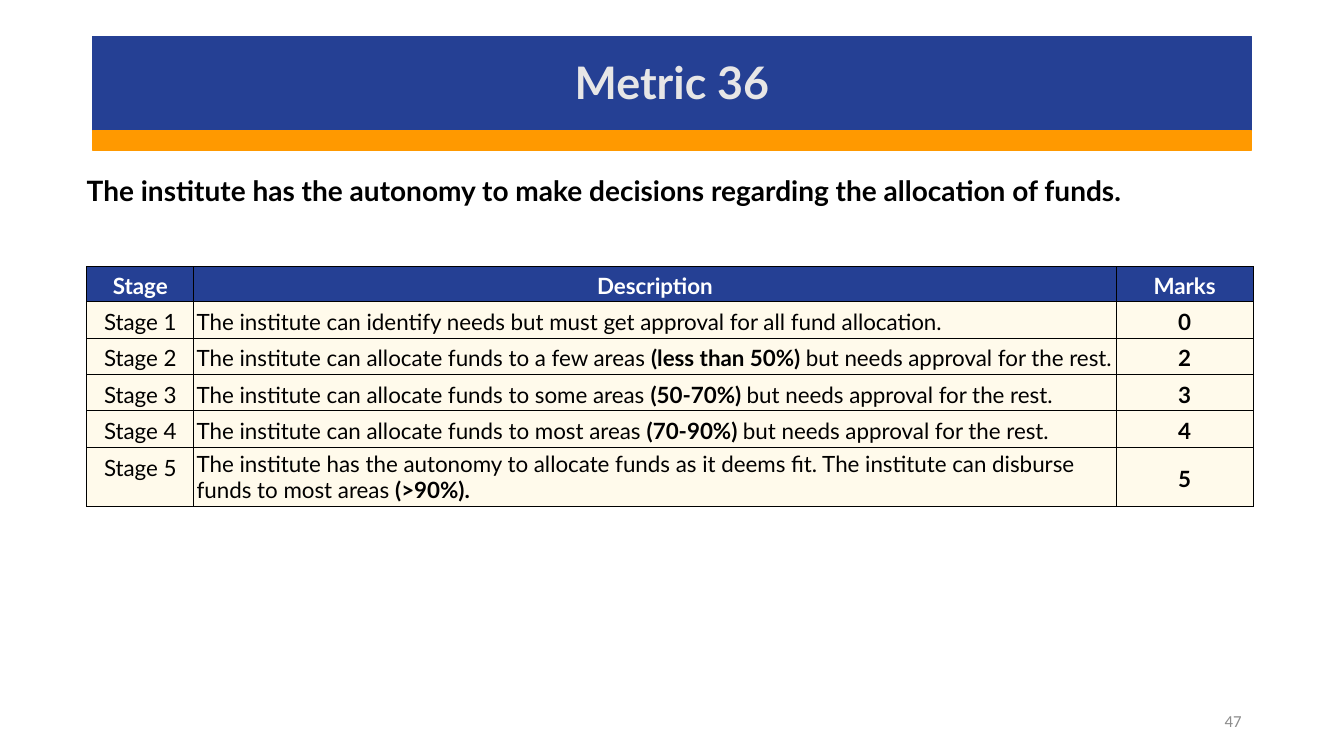
"""Build the Metric 36 slide on fund allocation autonomy."""
from lxml.etree import SubElement
from pptx import Presentation
from pptx.dml.color import RGBColor
from pptx.enum.shapes import MSO_SHAPE
from pptx.enum.text import MSO_ANCHOR, MSO_AUTO_SIZE, PP_ALIGN
from pptx.oxml.ns import qn
from pptx.util import Pt

BLUE = RGBColor(0x25, 0x40, 0x94)
ORANGE = RGBColor(0xFF, 0x99, 0x00)
CREAM = RGBColor(0xFF, 0xFA, 0xEB)
BLACK = RGBColor(0x00, 0x00, 0x00)
WHITE = RGBColor(0xFF, 0xFF, 0xFF)
LIGHT_GRAY = RGBColor(0xE7, 0xE6, 0xE6)
GRAY = RGBColor(0x8C, 0x8C, 0x8C)

HEADER = ("Stage", "Description", "Marks")
STAGES = [
    (["The institute can identify needs but must get approval for all fund allocation."], "0"),
    (["The institute can allocate funds to a few areas ", "(less than 50%) ",
      "but needs approval for the rest."], "2"),
    (["The institute can allocate funds to some areas ", "(50-70%) ",
      "but needs approval for the rest."], "3"),
    (["The institute can allocate funds to most areas ", "(70-90%) ",
      "but needs approval for the rest."], "4"),
    (["The institute has the autonomy to allocate funds as it deems fit. "
      "The institute can disburse funds to most areas ", "(>90%)."], "5"),
]
COLUMN_WIDTHS = (76.5, 658.75, 98)
ROW_HEIGHTS = (25, 26, 26, 26, 26, 42)


def add_text(p, text, size=16, color=BLACK, bold=False, font="Lato", align=None, spacing=None):
    """Add a formatted run to a paragraph."""
    if align is not None:
        p.alignment = align
    if spacing:
        p.line_spacing = spacing
    r = p.add_run()
    r.text = text
    r.font.name = font
    r.font.size = Pt(size)
    r.font.bold = bold
    r.font.color.rgb = color


def place(sp, left, top, width, height, anchor):
    """Position a text shape and set its frame."""
    sp.left, sp.top, sp.width, sp.height = Pt(left), Pt(top), Pt(width), Pt(height)
    tf = sp.text_frame
    tf.word_wrap = True
    tf.auto_size = MSO_AUTO_SIZE.NONE
    tf.vertical_anchor = anchor
    return tf.paragraphs[0]


def add_band(slide, top, height, color):
    """Add a coloured band across the heading."""
    sp = slide.shapes.add_shape(MSO_SHAPE.RECTANGLE, Pt(66), Pt(top), Pt(828), Pt(height))
    sp.shadow.inherit = False
    sp.fill.solid()
    sp.fill.fore_color.rgb = color
    sp.line.color.rgb = color
    sp.line.width = Pt(1)


def add_title(slide, text):
    """Fill the title placeholder and bring it above the bands."""
    sp = slide.shapes.title
    p = place(sp, 66, 28, 828, 65.5, MSO_ANCHOR.MIDDLE)
    add_text(p, text, size=32, color=LIGHT_GRAY, bold=True, align=PP_ALIGN.CENTER, spacing=0.9)
    slide.shapes._spTree.append(sp._element)


def add_statement(slide, text):
    """Fill the body placeholder without a bullet."""
    p = place(slide.placeholders[1], 42.5, 123, 872.5, 111, MSO_ANCHOR.TOP)
    pPr = p._p.get_or_add_pPr()
    pPr.set("marL", str(Pt(12.25)))
    pPr.set("indent", "0")
    SubElement(pPr, qn("a:buNone"))
    p.space_before = Pt(0)
    add_text(p, text, size=20, bold=True, spacing=0.9)


def format_cell(cell, fill, anchor, margin):
    """Set the borders, fill, margins and anchor of a cell."""
    tcPr = cell._tc.get_or_add_tcPr()
    for side in ("lnL", "lnR", "lnT", "lnB"):
        ln = SubElement(tcPr, qn(f"a:{side}"), w=str(Pt(0.75)))
        SubElement(SubElement(ln, qn("a:solidFill")), qn("a:srgbClr"), val=str(BLACK))
    cell.fill.solid()
    cell.fill.fore_color.rgb = fill
    cell.vertical_anchor = anchor
    cell.margin_left = cell.margin_right = Pt(margin)
    cell.margin_top = cell.margin_bottom = Pt(margin)
    return cell.text_frame.paragraphs[0]


def add_stage_table(slide):
    """Add the table of stages, descriptions and marks."""
    frame = slide.shapes.add_table(len(ROW_HEIGHTS), len(COLUMN_WIDTHS), Pt(62), Pt(190.5),
                                   Pt(sum(COLUMN_WIDTHS)), Pt(sum(ROW_HEIGHTS)))
    table = frame.table
    for column, width in zip(table.columns, COLUMN_WIDTHS):
        column.width = Pt(width)
    for row, height in zip(table.rows, ROW_HEIGHTS):
        row.height = Pt(height)

    centred = {"align": PP_ALIGN.CENTER, "spacing": 1.15}
    for c, (label, anchor) in enumerate(zip(HEADER, (MSO_ANCHOR.MIDDLE, MSO_ANCHOR.BOTTOM,
                                                   MSO_ANCHOR.MIDDLE))):
        p = format_cell(table.cell(0, c), BLUE, anchor, 1.5)
        add_text(p, label, color=WHITE, bold=True, **centred)
    for n, (description, marks) in enumerate(STAGES, 1):
        p = format_cell(table.cell(n, 0), CREAM, MSO_ANCHOR.TOP, 2)
        add_text(p, f"Stage {n}", **centred)
        p = format_cell(table.cell(n, 1), CREAM, MSO_ANCHOR.BOTTOM, 2)
        for i, part in enumerate(description):
            add_text(p, part, bold=i == 1)
        p = format_cell(table.cell(n, 2), CREAM, MSO_ANCHOR.MIDDLE, 1.5)
        add_text(p, marks, bold=True, **centred)


def add_page_number(slide, text):
    """Add the page number at the lower right."""
    sp = slide.shapes.add_textbox(0, 0, 0, 0)
    p = place(sp, 678, 500.5, 216, 28.75, MSO_ANCHOR.MIDDLE)
    add_text(p, text, size=12, color=GRAY, font="Calibri", align=PP_ALIGN.RIGHT)


def main():
    """Build and save the slide."""
    prs = Presentation()
    prs.slide_width, prs.slide_height = Pt(960), Pt(540)
    slide = prs.slides.add_slide(prs.slide_layouts[1])
    add_band(slide, 26, 67, BLUE)
    add_band(slide, 93.5, 13.75, ORANGE)
    add_statement(slide, "The institute has the autonomy to make decisions "
                         "regarding the allocation of funds.")
    add_stage_table(slide)
    add_page_number(slide, "47")
    add_title(slide, "Metric 36")
    prs.save("out.pptx")


if __name__ == "__main__":
    main()
